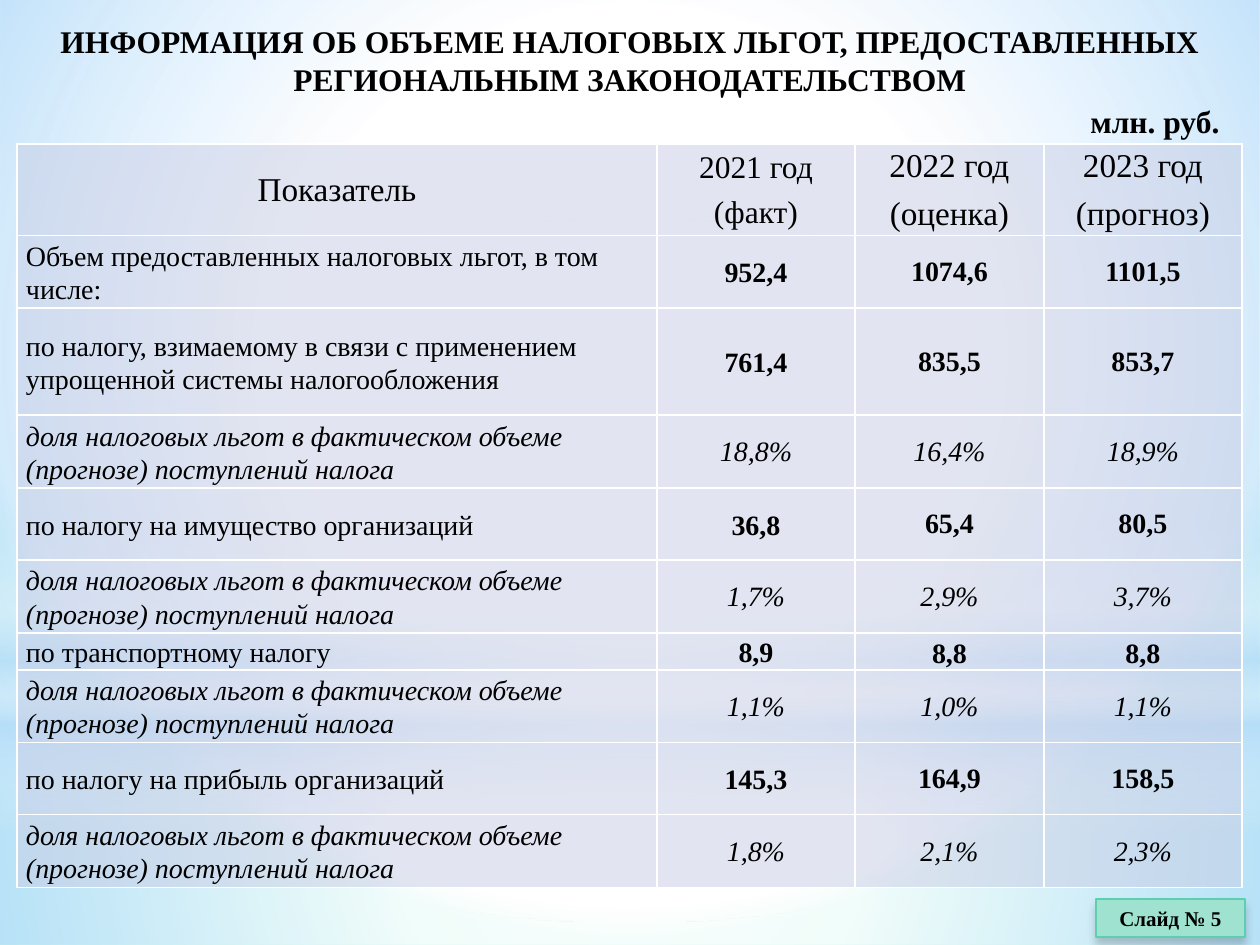
from lxml import etree
from pptx import Presentation
from pptx import util as u
from pptx.dml.color import RGBColor
from pptx.enum import shapes, text
from pptx.oxml import parse_xml
from pptx.oxml.ns import nsdecls, qn

PX = 7257  # EMU in one pixel, 126 pixels to the inch
FONT = "Times New Roman"
COLORS = {
    "text": "000000",
    "white": "FFFFFF",
    "sky": "B4DCFA",
    "mint": "C4F8EC",
    "cell": "C8CDE5",
    "badge": "9EE2CF",
    "badge_line": "5DCEAF",
}
LEFT, CENTER = text.PP_ALIGN.LEFT, text.PP_ALIGN.CENTER
MIDDLE, BOTTOM = text.MSO_ANCHOR.MIDDLE, text.MSO_ANCHOR.BOTTOM


def write(frame, content, size, bold=False, italic=False, align=CENTER,
          line_spacing=None, after=0):
    """Fill a text frame, one paragraph for each line of content."""
    for index, line in enumerate(content.split("\n")):
        paragraph = frame.add_paragraph() if index else frame.paragraphs[0]
        paragraph.alignment = align
        paragraph.line_spacing = line_spacing
        paragraph.space_after = u.Pt(after)
        run = paragraph.add_run()
        run.text = line
        run.font.name = FONT
        run.font.size = u.Pt(size)
        run.font.bold = bold
        run.font.italic = italic
        run.font.color.rgb = RGBColor.from_string(COLORS["text"])


def set_gradient(fill, element, stops, focus=None):
    """Stops are (position, colour, opacity); without a focus the fill runs downwards."""
    fill.solid()
    stop_list = "".join(
        f'<a:gs pos="{position * 1000}"><a:srgbClr val="{COLORS[color]}">'
        f'<a:alpha val="{opacity * 1000}"/></a:srgbClr></a:gs>'
        for position, color, opacity in stops)
    if focus:
        sides = " ".join(f'{side}="{value * 1000}"' for side, value in zip("ltrb", focus))
        direction = f'<a:path path="circle"><a:fillToRect {sides}/></a:path>'
    else:
        direction = '<a:lin ang="5400000" scaled="0"/>'
    solid = element.find(".//" + qn("a:solidFill"))
    solid.getparent().replace(solid, parse_xml(
        f'<a:gradFill {nsdecls("a")} rotWithShape="1"><a:gsLst>{stop_list}</a:gsLst>'
        f'{direction}</a:gradFill>'))


presentation = Presentation()
presentation.slide_width = 1260 * PX
presentation.slide_height = 945 * PX
slide = presentation.slides.add_slide(presentation.slide_layouts[6])

# Background and its layers of light
set_gradient(slide.background.fill, slide.element,
             [(85, "white", 100), (89, "mint", 100)], (20, 10, 20, 60))

RECTANGLE, OVAL = shapes.MSO_SHAPE.RECTANGLE, shapes.MSO_SHAPE.OVAL
MIDPOINT = (50, 50, 50, 50)
layers = [
    (RECTANGLE, 703, 242, [(0, "white", 91), (37, "white", 76), (100, "sky", 79)], MIDPOINT),
    (RECTANGLE, 0, 703, [(0, "white", 89), (48, "white", 62), (100, "sky", 79)], MIDPOINT),
    (RECTANGLE, 519, 315, [(0, "white", 0), (29, "white", 30), (45, "sky", 40),
                           (55, "white", 26), (65, "sky", 60), (100, "white", 0)], None),
    (OVAL, 220, 703, [(0, "white", 100), (56, "white", 0)], MIDPOINT),
]
for kind, top, height, stops, focus in layers:
    layer = slide.shapes.add_shape(kind, 0, top * PX, 1260 * PX, height * PX)
    layer.shadow.inherit = False
    layer.line.fill.background()
    set_gradient(layer.fill, layer.element, stops, focus)

# Title and unit
title = slide.shapes.add_textbox(0, 16 * PX, 1260 * PX, 89 * PX)
title.text_frame.word_wrap = True
write(title.text_frame, "ИНФОРМАЦИЯ ОБ ОБЪЕМЕ НАЛОГОВЫХ ЛЬГОТ, ПРЕДОСТАВЛЕННЫХ "
      "РЕГИОНАЛЬНЫМ ЗАКОНОДАТЕЛЬСТВОМ", 18, bold=True)

unit = slide.shapes.add_textbox(1078 * PX, 96 * PX, 156 * PX, 50 * PX)
unit.text_frame.word_wrap = False
write(unit.text_frame, "млн. руб.", 18, bold=True, align=LEFT)

# Table of tax benefits
SHARE = "доля налоговых льгот в фактическом объеме (прогнозе) поступлений налога"
rows = [
    ("Показатель", "2021 год\n(факт)", "2022 год\n(оценка)", "2023 год\n(прогноз)"),
    ("Объем предоставленных налоговых льгот, в том числе:", "952,4", "1074,6", "1101,5"),
    ("по налогу, взимаемому в связи с применением упрощенной системы налогообложения",
     "761,4", "835,5", "853,7"),
    (SHARE, "18,8%", "16,4%", "18,9%"),
    ("по налогу на имущество организаций", "36,8", "65,4", "80,5"),
    (SHARE, "1,7%", "2,9%", "3,7%"),
    ("по транспортному налогу", "8,9", "8,8", "8,8"),
    (SHARE, "1,1%", "1,0%", "1,1%"),
    ("по налогу на прибыль организаций", "145,3", "164,9", "158,5"),
    (SHARE, "1,8%", "2,1%", "2,3%"),
]
column_widths = [640, 198, 189, 198]
row_heights = [90, 72, 107, 72, 72, 72, 36, 72, 72, 72]
TRANSPORT_ROW = 6

table = slide.shapes.add_table(
    len(rows), len(column_widths), 17 * PX, 144 * PX,
    sum(column_widths) * PX, sum(row_heights) * PX).table
table.first_row = table.horz_banding = False
for column, width in zip(table.columns, column_widths):
    column.width = width * PX
for row, height in zip(table.rows, row_heights):
    row.height = height * PX

for row_index, values in enumerate(rows):
    is_header = row_index == 0
    is_share = values[0] == SHARE
    for column_index, value in enumerate(values):
        is_label = column_index == 0
        is_spaced = is_label or (column_index == 1 and not is_share)
        cell = table.cell(row_index, column_index)
        side_margin = 9 if is_header or is_spaced else 1
        cell.margin_left = cell.margin_right = side_margin * PX
        cell.margin_top, cell.margin_bottom = PX, 0
        low = row_index == TRANSPORT_ROW and column_index > 1
        cell.vertical_anchor = BOTTOM if low else MIDDLE
        if is_header:
            write(cell.text_frame, value, 18 if column_index == 1 else 19,
                  after=8 if is_label else 6)
        else:
            write(cell.text_frame, value, 16, bold=not (is_label or is_share),
                  italic=is_share, align=LEFT if is_label else CENTER,
                  line_spacing=1.07 if is_spaced else None, after=8 if is_spaced else 0)

        cell.fill.solid()
        cell.fill.fore_color.rgb = RGBColor.from_string(COLORS["cell"])
        properties = cell._tc.get_or_add_tcPr()
        fill_color = properties.find(".//" + qn("a:srgbClr"))
        etree.SubElement(fill_color, qn("a:alpha"), val="51000")
        for position, side in enumerate("LRTB"):
            properties.insert(position, parse_xml(
                f'<a:ln{side} {nsdecls("a")} w="12700"><a:solidFill>'
                f'<a:srgbClr val="{COLORS["white"]}"/></a:solidFill></a:ln{side}>'))

# Slide number badge
badge = slide.shapes.add_shape(RECTANGLE, 1096 * PX, 899 * PX, 149 * PX, 38 * PX)
badge.shadow.inherit = False
badge.fill.solid()
badge.fill.fore_color.rgb = RGBColor.from_string(COLORS["badge"])
badge.line.color.rgb = RGBColor.from_string(COLORS["badge_line"])
badge.line.width = u.Pt(0.75)
effects = badge.element.spPr.find(qn("a:effectLst"))
effects.append(parse_xml(
    f'<a:outerShdw {nsdecls("a")} blurRad="{u.Pt(5)}" dist="{u.Pt(4)}" dir="5400000" '
    f'rotWithShape="0"><a:srgbClr val="{COLORS["text"]}"><a:alpha val="20000"/>'
    '</a:srgbClr></a:outerShdw>'))
badge.text_frame.word_wrap = True
badge.text_frame.vertical_anchor = MIDDLE
write(badge.text_frame, "Слайд № 5", 12, bold=True)

presentation.save("out.pptx")
